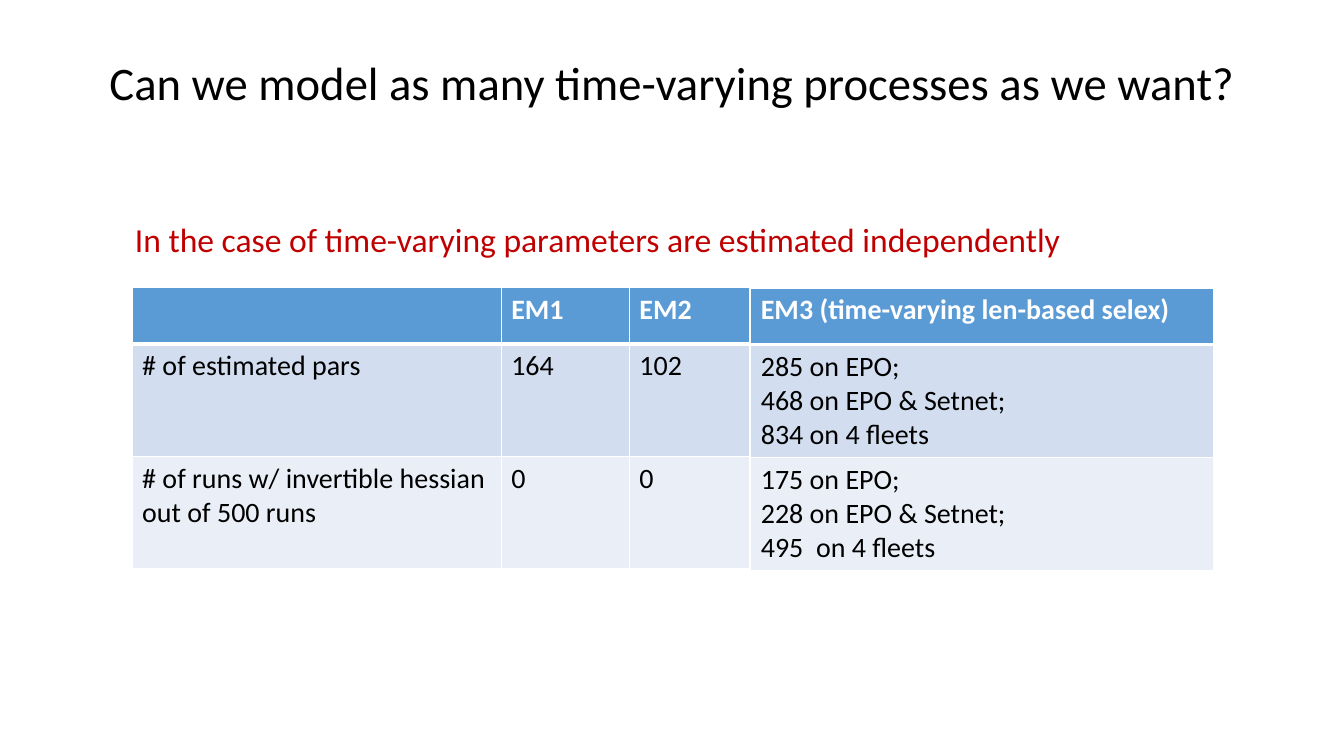
from lxml import etree
from pptx import Presentation
from pptx.dml.color import RGBColor
from pptx.enum.text import MSO_ANCHOR, PP_ALIGN
from pptx.oxml.ns import qn
from pptx.util import Cm, Pt

CENTER = PP_ALIGN.CENTER
MIDDLE = MSO_ANCHOR.MIDDLE
FONT = "Calibri"
COLORS = {
    "black": "000000",
    "white": "FFFFFF",
    "red": "C00000",
    "header": "5B9BD5",
    "odd_row": "D2DEEF",
    "even_row": "EAEFF7",
}
ROW_FILLS = ["header", "odd_row", "even_row"]
ROW_HEIGHTS = [1.42, 2.84, 2.84]

# left, top, column widths (cm) and cell texts of each table
TABLES = [
    (3.33, 7.24, [9.3, 3.23, 3.02], [
        ["", "EM1", "EM2"],
        ["# of estimated pars", "164", "102"],
        ["# of runs w/ invertible hessian out of 500 runs", "0", "0"],
    ]),
    (18.92, 7.26, [11.66], [
        ["EM3 (time-varying len-based selex)"],
        ["285 on EPO;\n468 on EPO & Setnet;\n834 on 4 fleets"],
        ["175 on EPO;\n228 on EPO & Setnet;\n495  on 4 fleets"],
    ]),
]


def style_text(text_frame, size, color, bold=False):
    for paragraph in text_frame.paragraphs:
        for run in paragraph.runs:
            run.font.name = FONT
            run.font.size = Pt(size)
            run.font.bold = bold
            run.font.color.rgb = RGBColor.from_string(COLORS[color])


def add_borders(cell, widths):
    """Draw white cell borders; widths maps a side (L, R, T, B) to points."""
    properties = cell._tc.get_or_add_tcPr()
    for side, width in widths.items():
        line = etree.SubElement(properties, qn(f"a:ln{side}"), w=str(Pt(width)))
        fill = etree.SubElement(line, qn("a:solidFill"))
        etree.SubElement(fill, qn("a:srgbClr"), val=COLORS["white"])


presentation = Presentation()
presentation.slide_width = Cm(33.87)
presentation.slide_height = Cm(19.05)
slide = presentation.slides.add_slide(presentation.slide_layouts[5])

title = slide.shapes.title
title.left, title.top, title.width, title.height = Cm(1.68), Cm(0.86), Cm(30.53), Cm(2.57)
title.text_frame.text = "Can we model as many time-varying processes as we want?"
title.text_frame.vertical_anchor = MIDDLE
title.text_frame.paragraphs[0].alignment = CENTER
title.text_frame.paragraphs[0].line_spacing = 0.9
style_text(title.text_frame, 33.3, "black")

for left, top, column_widths, rows in TABLES:
    frame = slide.shapes.add_table(
        len(rows), len(column_widths), Cm(left), Cm(top),
        Cm(sum(column_widths)), Cm(sum(ROW_HEIGHTS)))
    table = frame.table
    for column, width in zip(table.columns, column_widths):
        column.width = Cm(width)
    for row_index, texts in enumerate(rows):
        table.rows[row_index].height = Cm(ROW_HEIGHTS[row_index])
        is_header = row_index == 0
        for column_index, text in enumerate(texts):
            cell = table.cell(row_index, column_index)
            cell.text_frame.text = text
            style_text(cell.text_frame, 20, "white" if is_header else "black", is_header)
            add_borders(cell, {"L": 1, "R": 1, "T": 3 if row_index == 1 else 1,
                               "B": 3 if is_header else 1})
            cell.fill.solid()
            cell.fill.fore_color.rgb = RGBColor.from_string(COLORS[ROW_FILLS[row_index]])

subtitle = slide.shapes.add_textbox(Cm(3.15), Cm(5.38), Cm(25.02), Cm(1.27))
subtitle.text_frame.word_wrap = True
subtitle.text_frame.text = "In the case of time-varying parameters are estimated independently"
style_text(subtitle.text_frame, 24, "red")

presentation.save("out.pptx")
